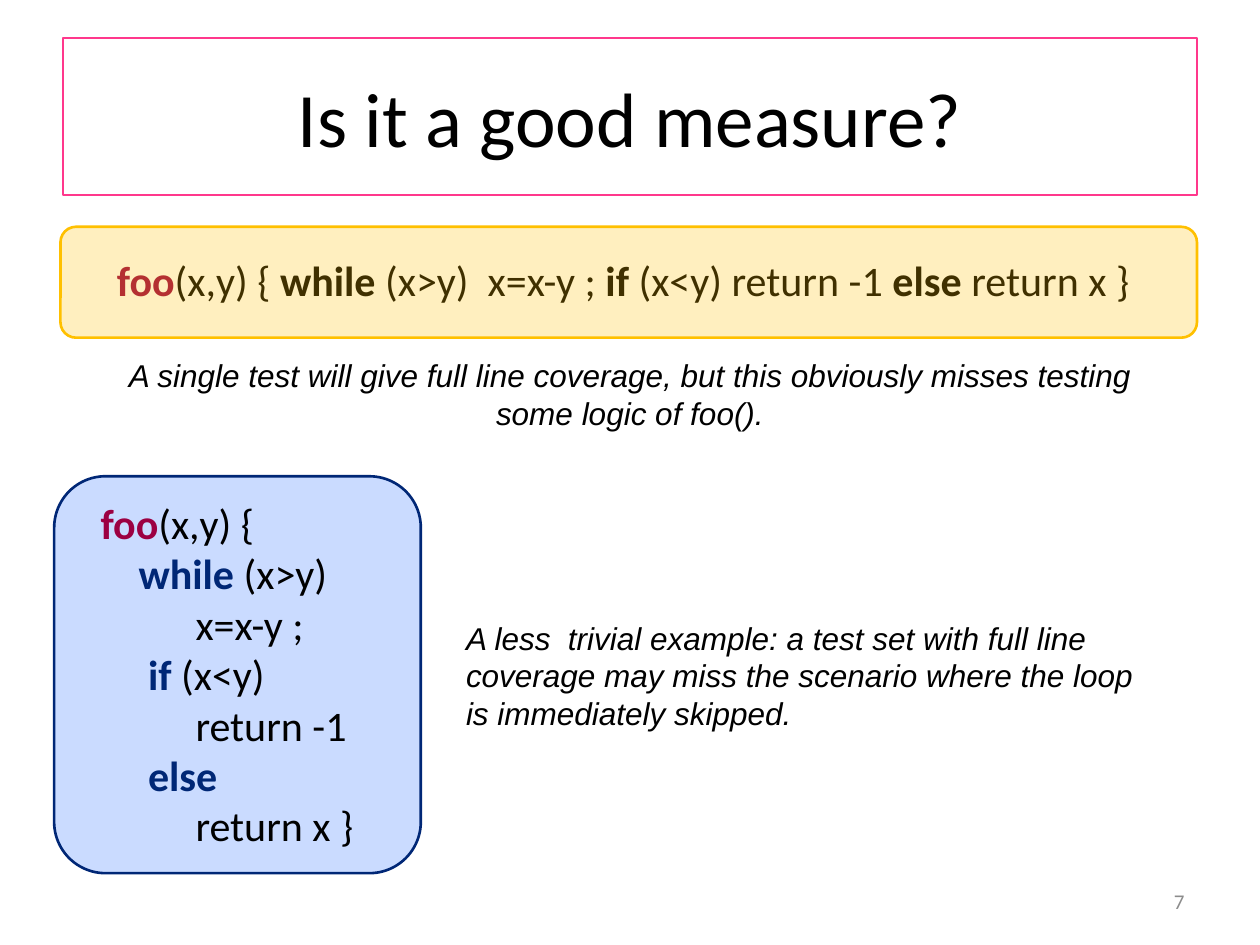
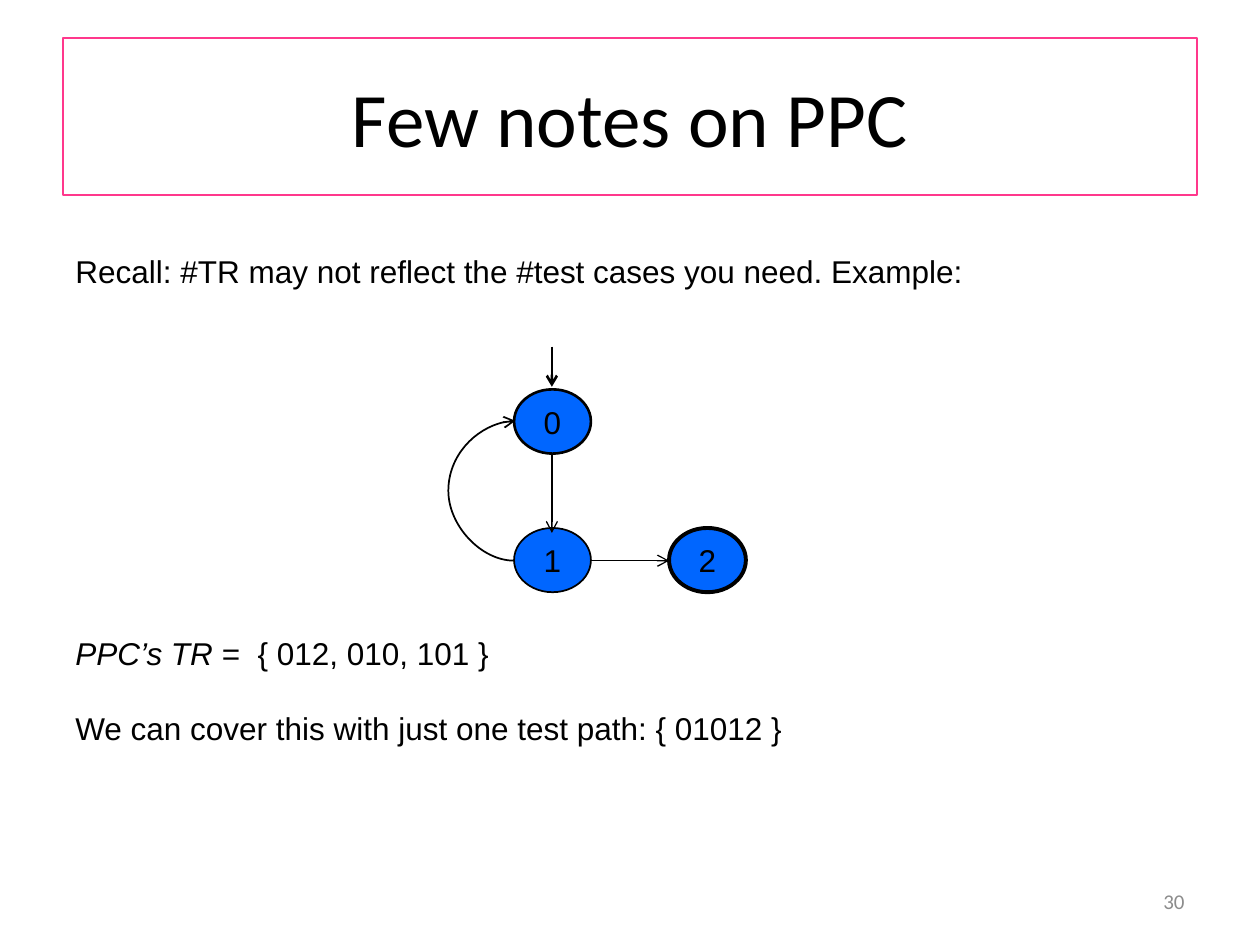
"""Two slides on the limits of line coverage and prime path coverage."""
from lxml import etree
from pptx import Presentation, util as u
from pptx.dml.color import RGBColor
from pptx.enum import shapes, text
from pptx.oxml.ns import qn

COLORS = {"black": "000000", "pink": "FF388C", "gray": "8C8C8C", "crimson": "9C0042",
          "navy": "002776", "blue": "2C71FF", "gold": "FFC000", "node": "0066FF"}
LEFT, CENTER, RIGHT = text.PP_ALIGN.LEFT, text.PP_ALIGN.CENTER, text.PP_ALIGN.RIGHT
TOP, MIDDLE = text.MSO_ANCHOR.TOP, text.MSO_ANCHOR.MIDDLE
RECT, ROUND, OVAL = (shapes.MSO_SHAPE.RECTANGLE, shapes.MSO_SHAPE.ROUNDED_RECTANGLE,
                     shapes.MSO_SHAPE.OVAL)


def write(shape, paragraphs, size, font="Arial", align=LEFT, anchor=TOP, wrap=True, gap=0):
    """Fill a shape with paragraphs of (text, style, colour) runs."""
    frame = shape.text_frame
    frame.word_wrap, frame.vertical_anchor = wrap, anchor
    for index, runs in enumerate(paragraphs):
        paragraph = frame.add_paragraph() if index else frame.paragraphs[0]
        paragraph.alignment = align
        if index and gap:
            paragraph.space_before = u.Pt(gap)
        for words, style, color in runs:
            run = paragraph.add_run()
            run.text = words
            run.font.name, run.font.size = font, u.Pt(size)
            run.font.bold, run.font.italic = style == "b", style == "i"
            run.font.color.rgb = RGBColor.from_string(COLORS[color])


def outline(slide, kind, box, line, width, fill=None, alpha=None):
    """Add a preset shape with a line and an optional, possibly translucent, fill."""
    shape = slide.shapes.add_shape(kind, *map(u.Inches, box))
    shape.shadow.inherit = False
    shape.line.color.rgb = RGBColor.from_string(COLORS[line])
    shape.line.width = u.Pt(width)
    if fill:
        shape.fill.solid()
        shape.fill.fore_color.rgb = RGBColor.from_string(COLORS[fill])
    else:
        shape.fill.background()
    if alpha:
        color = shape.fill._xPr.find(qn("a:solidFill"))[0]
        etree.SubElement(color, qn("a:alpha")).set("val", str(alpha * 1000))
    if kind == ROUND:
        shape.adjustments[0] = 0.14
    return shape


deck = Presentation()
deck.slide_width, deck.slide_height = u.Inches(10), u.Inches(7.5)

pages = []
for heading, number in (("Is it a good measure?", "7"), ("Few notes on PPC", "30")):
    page = deck.slides.add_slide(deck.slide_layouts[6])
    title = outline(page, RECT, (0.5, 0.3, 9, 1.25), "pink", 1)
    write(title, [[(heading, "", "black")]], 44, "Calibri", CENTER, MIDDLE)
    footer = page.shapes.add_textbox(*map(u.Inches, (7.17, 6.95, 2.33, 0.4)))
    write(footer, [[(number, "", "gray")]], 12, "Calibri", RIGHT, MIDDLE)
    pages.append(page)
measure, notes = pages

one_liner = [[("foo", "b", "crimson"), ("(x,y) { ", "", "black"), ("while", "b", "black"),
              (" (x>y)  x=x-y ;", "", "black"), (" if ", "b", "black"),
              ("(x<y) return -1 ", "", "black"), ("else", "b", "black"),
              (" return x }", "", "black")]]
listing = [
    [("foo", "b", "crimson"), ("(x,y) {", "", "black")],
    [("    ", "", "black"), ("while", "b", "navy"), (" (x>y)", "", "black")],
    [("          x=x-y ;", "", "black")],
    [("     ", "", "black"), ("if", "b", "navy"), (" (x<y)", "", "black")],
    [("          return -1", "", "black")],
    [("     ", "", "black"), ("else", "b", "navy")],
    [("          return x }", "", "black")],
]
single_test = ("A single test will give full line coverage, but this obviously misses "
               "testing some logic of foo().")
less_trivial = ("A less  trivial example: a test set with full line coverage may miss "
                "the scenario where the loop is immediately skipped.")

code_line = measure.shapes.add_textbox(*map(u.Inches, (0.83, 1.97, 8.33, 0.51)))
write(code_line, one_liner, 24, "Calibri", wrap=False)
for remark, box, align in ((less_trivial, (3.6, 4.86, 5.51, 1.01), LEFT),
                           (single_test, (0.83, 2.78, 8.34, 1.01), CENTER)):
    remark_box = measure.shapes.add_textbox(*map(u.Inches, box))
    write(remark_box, [[(remark, "i", "black")]], 18, align=align)
outline(measure, ROUND, (0.43, 3.78, 2.91, 3.15), "navy", 1.5, "blue", 25)
code_block = measure.shapes.add_textbox(*map(u.Inches, (0.7, 3.9, 2.37, 2.93)))
write(code_block, listing, 24, "Calibri", wrap=False)
outline(measure, ROUND, (0.48, 1.8, 9.02, 0.88), "gold", 1.5, "gold", 25)

for label, x, y, width in (("2", 5.31, 4.19, 2.25), ("0", 4.08, 3.09, 1.5), ("1", 4.08, 4.19, 1)):
    node = outline(notes, OVAL, (x, y, 0.61, 0.51), "black", width, "node")
    write(node, [[(label, "", "black")]], 18, align=CENTER, anchor=MIDDLE, wrap=False)

STRAIGHT, CURVE = shapes.MSO_CONNECTOR.STRAIGHT, shapes.MSO_CONNECTOR.CURVE
for kind, ends, width in ((STRAIGHT, (4.38, 2.75, 4.38, 3.07), 1.5),
                          (CURVE, (4.08, 4.45, 4.09, 3.34), 1),
                          (STRAIGHT, (4.38, 3.6, 4.38, 4.23), 0.75),
                          (STRAIGHT, (4.69, 4.45, 5.31, 4.45), 0.75)):
    edge = notes.shapes.add_connector(kind, *map(u.Inches, ends))
    edge.line.color.rgb = RGBColor.from_string(COLORS["black"])
    edge.line.width = u.Pt(width)
    etree.SubElement(edge.line._get_or_add_ln(), qn("a:tailEnd")).set("type", "arrow")
    properties = edge._element.spPr
    etree.SubElement(properties, qn("a:effectLst"))
    if kind == CURVE:
        geometry = properties.find(qn("a:prstGeom"))
        guides = geometry.find(qn("a:avLst"))
        if guides is None:
            guides = etree.SubElement(geometry, qn("a:avLst"))
        bend = etree.SubElement(guides, qn("a:gd"))
        bend.set("name", "adj1")
        bend.set("fmla", "val -5300000")

conclusion = notes.shapes.add_textbox(*map(u.Inches, (0.5, 4.98, 9, 1.01)))
write(conclusion, [[("PPC’s TR", "i", "black"), (" =  { 012, 010, 101 }", "", "black")],
                   [("We can cover this with just one test path: { 01012 }", "", "black")]],
      18, gap=21.5)
recall = notes.shapes.add_textbox(*map(u.Inches, (0.5, 1.95, 8.82, 0.4)))
write(recall, [[("Recall: #TR may not reflect the #test cases you need. Example:", "", "black")]], 18)

deck.save("out.pptx")
